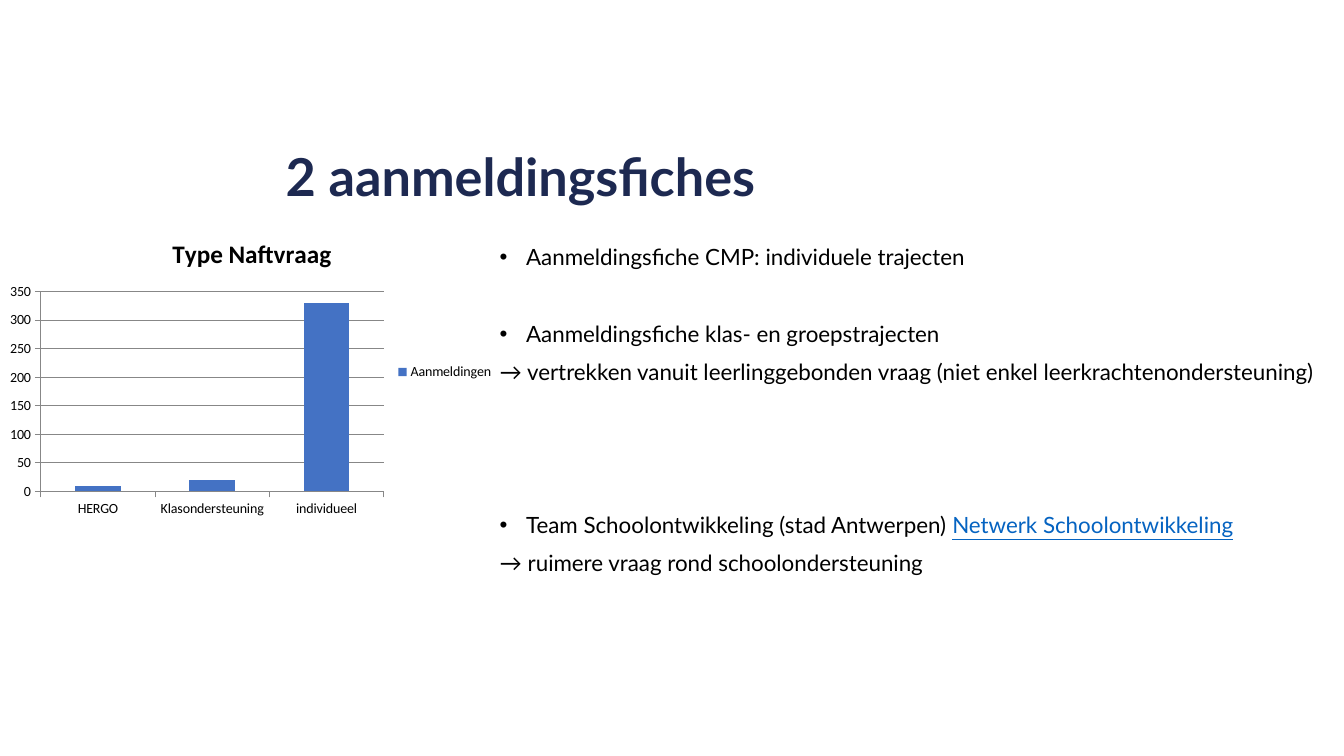
from lxml import etree
from pptx import Presentation
from pptx import util as u
from pptx.chart import data as cd
from pptx.dml.color import RGBColor
from pptx.enum import chart as ch, text as tx
from pptx.oxml import ns

Pt = u.Pt
HUES = {"navy": "1D2951", "ink": "000000", "link": "0563C1",
        "bar": "4472C4", "grid": "878787"}
LINES = [
    (True, 0, [("Aanmeldingsfiche CMP: individuele trajecten", False)]),
    (True, 37.3, [("Aanmeldingsfiche klas- en groepstrajecten", False)]),
    (False, 10, [("→ vertrekken vanuit leerlinggebonden vraag "
                  "(niet enkel leerkrachtenondersteuning)", False)]),
    (True, 92, [("Team Schoolontwikkeling (stad Antwerpen) ", False),
                ("Netwerk Schoolontwikkeling", True)]),
    (False, 10, [("→ ruimere vraag rond schoolondersteuning", False)]),
]


def hue(key):
    return RGBColor.from_string(HUES[key])


def style(font, face, size, key, bold=False):
    font.name, font.size, font.bold = face, Pt(size), bold
    font.color.rgb = hue(key)


def place(box, left, top, width, height):
    box.left, box.top = Pt(left), Pt(top)
    box.width, box.height = Pt(width), Pt(height)
    frame = box.text_frame
    frame.margin_left = frame.margin_right = 0
    frame.margin_top = frame.margin_bottom = 0
    frame.word_wrap = True
    frame.auto_size = tx.MSO_AUTO_SIZE.NONE
    frame.vertical_anchor = tx.MSO_ANCHOR.TOP
    return frame


def bullet(para, shown):
    props = para._p.get_or_add_pPr()
    dent = Pt(18.9) if shown else 0
    props.set("marL", str(dent))
    props.set("indent", str(-dent))
    if shown:
        etree.SubElement(props, ns.qn("a:buFont")).set("typeface", "Arial")
        etree.SubElement(props, ns.qn("a:buChar")).set("char", "•")
    else:
        etree.SubElement(props, ns.qn("a:buNone"))


def add_title(slide):
    frame = place(slide.shapes.title, 204, 108.2, 690, 104.4)
    para = frame.paragraphs[0]
    para.alignment = tx.PP_ALIGN.LEFT
    para.line_spacing = 0.9
    run = para.add_run()
    run.text = "2 aanmeldingsfiches"
    style(run.font, "Lato", 37.3, "navy", True)


def add_list(slide):
    frame = place(slide.placeholders[1], 356.9, 176, 602.5, 313.6)
    for num, (dot, gap, runs) in enumerate(LINES):
        para = frame.add_paragraph() if num else frame.paragraphs[0]
        bullet(para, dot)
        para.line_spacing = 0.9
        para.space_before = Pt(gap)
        for words, link in runs:
            run = para.add_run()
            run.text = words
            style(run.font, "Lato", 16, "link" if link else "ink")
            run.font.underline = link


def add_bars(slide):
    data = cd.CategoryChartData()
    data.categories = ["HERGO", "Klasondersteuning", "individueel"]
    data.add_series("Aanmeldingen", [10, 20, 330])
    chart = slide.shapes.add_chart(
        ch.XL_CHART_TYPE.COLUMN_CLUSTERED,
        0, Pt(157.7), Pt(360), Pt(216), data).chart
    style(chart.font, "Calibri", 10, "ink")
    chart.has_title = True
    run = chart.chart_title.text_frame.paragraphs[0].add_run()
    run.text = "Type Naftvraag"
    style(run.font, "Calibri", 18, "ink", True)
    chart.has_legend = True
    chart.legend.position = ch.XL_LEGEND_POSITION.RIGHT
    chart.legend.include_in_layout = False
    plot = chart.plots[0]
    plot.gap_width, plot.vary_by_categories = 150, False
    fill = plot.series[0].format.fill
    fill.solid()
    fill.fore_color.rgb = hue("bar")
    for axis in (chart.category_axis, chart.value_axis):
        axis.major_tick_mark = ch.XL_TICK_MARK.OUTSIDE
        axis.minor_tick_mark = ch.XL_TICK_MARK.NONE
        axis.format.line.color.rgb = hue("grid")
    scale = chart.value_axis
    scale.minimum_scale, scale.maximum_scale, scale.major_unit = 0, 350, 50
    scale.has_major_gridlines = True
    scale.major_gridlines.format.line.color.rgb = hue("grid")


def main():
    deck = Presentation()
    deck.slide_width, deck.slide_height = Pt(960), Pt(540)
    slide = deck.slides.add_slide(deck.slide_layouts[1])
    add_title(slide)
    add_list(slide)
    add_bars(slide)
    deck.save("out.pptx")


if __name__ == "__main__":
    main()
